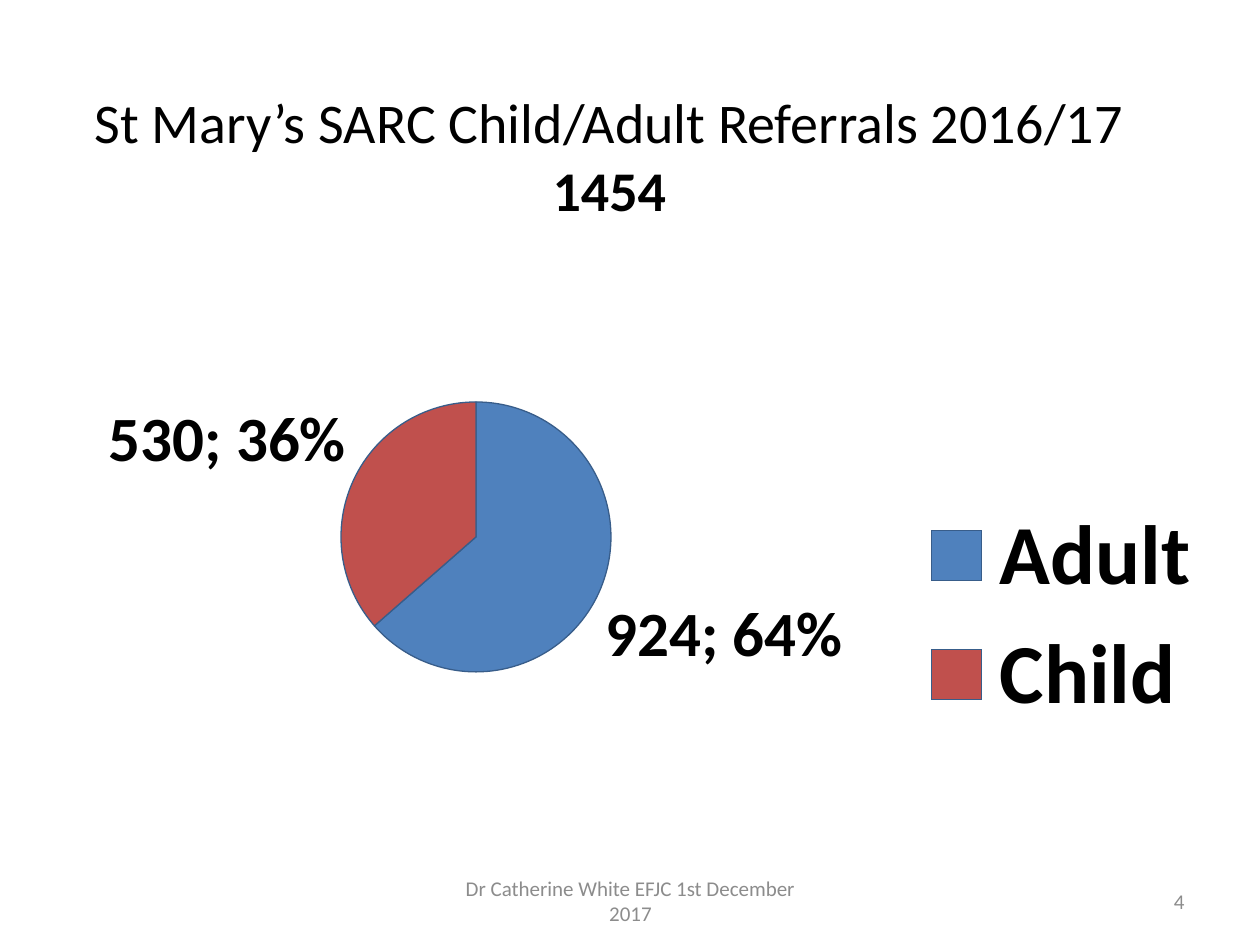
from dataclasses import dataclass

from lxml import etree
from pptx import Presentation
from pptx.chart.data import CategoryChartData
from pptx.dml.color import RGBColor
from pptx.enum.chart import XL_CHART_TYPE, XL_LABEL_POSITION, XL_LEGEND_POSITION
from pptx.enum.text import MSO_ANCHOR, PP_ALIGN
from pptx.oxml import parse_xml
from pptx.oxml.ns import nsdecls, qn
from pptx.util import Emu, Pt

PIE = XL_CHART_TYPE.PIE
OUTSIDE = XL_LABEL_POSITION.OUTSIDE_END
LEGEND_RIGHT = XL_LEGEND_POSITION.RIGHT
MIDDLE = MSO_ANCHOR.MIDDLE
CENTER, RIGHT = PP_ALIGN.CENTER, PP_ALIGN.RIGHT

PX_PER_INCH = 126
FONT = "Calibri"
COLORS = {"text": "000000", "footer": "8C8C8C", "Adult": "4F81BD",
          "Child": "C0504D", "outline": "385D8A"}
REFERRALS = {"Adult": 924, "Child": 530}


@dataclass(frozen=True)
class Box:
    left: int
    top: int
    width: int
    height: int


@dataclass(frozen=True)
class Line:
    text: str
    bold: bool = False


@dataclass(frozen=True)
class Caption:
    box: Box
    lines: tuple[Line, ...]
    size: int
    color: str
    align: PP_ALIGN


CHART_BOX = Box(32, 305, 1197, 620)
PIE_BOX = Box(341, 402, 270, 270)
CAPTIONS = (
    Caption(Box(54, 76, 1111, 158),
            (Line("St Mary’s SARC Child/Adult Referrals 2016/17"), Line("1454", True)),
            32, "text", CENTER),
    Caption(Box(431, 876, 399, 50),
            (Line("Dr Catherine White EFJC 1st December 2017"),), 12, "footer", CENTER),
    Caption(Box(903, 876, 294, 50), (Line("4"),), 12, "footer", RIGHT),
)


def px(length: int) -> Emu:
    return Emu(round(length * 914400 / PX_PER_INCH))


def place(box: Box) -> tuple[Emu, ...]:
    return px(box.left), px(box.top), px(box.width), px(box.height)


def rgb(name: str) -> RGBColor:
    return RGBColor.from_string(COLORS[name])


def style(font, size: int, color: str, bold: bool = False) -> None:
    font.name, font.size, font.bold = FONT, Pt(size), bold
    font.color.rgb = rgb(color)


def add_caption(slide, caption: Caption) -> None:
    frame = slide.shapes.add_textbox(*place(caption.box)).text_frame
    frame.word_wrap = True
    frame.vertical_anchor = MIDDLE
    paragraph = frame.paragraphs[0]
    paragraph.alignment = caption.align
    for index, line in enumerate(caption.lines):
        if index:
            paragraph.add_line_break()
        run = paragraph.add_run()
        run.text = line.text
        style(run.font, caption.size, caption.color, line.bold)


def fix_plot_area(chart, outer: Box, inner: Box) -> None:
    """Pin the pie to a fixed place inside the chart frame."""
    shares = {"x": (inner.left - outer.left) / outer.width,
              "y": (inner.top - outer.top) / outer.height,
              "w": inner.width / outer.width,
              "h": inner.height / outer.height}
    settings = {"layoutTarget": "inner", "xMode": "edge", "yMode": "edge",
                **{key: f"{share:.4f}" for key, share in shares.items()}}
    tags = "".join(f'<c:{tag} val="{val}"/>' for tag, val in settings.items())
    plot_area = chart.plots[0]._element.getparent()
    for layout in plot_area.findall(qn("c:layout")):
        plot_area.remove(layout)
    plot_area.insert(0, parse_xml(
        f'<c:layout {nsdecls("c")}><c:manualLayout>{tags}</c:manualLayout></c:layout>'))


def add_referral_pie(slide) -> None:
    data = CategoryChartData()
    data.categories = list(REFERRALS)
    data.add_series("Series 1", list(REFERRALS.values()))
    chart = slide.shapes.add_chart(PIE, *place(CHART_BOX), data).chart
    chart.has_title = False
    style(chart.font, 18, "text")
    fix_plot_area(chart, CHART_BOX, PIE_BOX)

    chart.has_legend = True
    chart.legend.position = LEGEND_RIGHT
    chart.legend.include_in_layout = False
    style(chart.legend.font, 48, "text", bold=True)

    plot = chart.plots[0]
    plot.vary_by_categories = True
    series = plot.series[0]
    for index, group in enumerate(REFERRALS):
        slice_format = series.points[index].format
        slice_format.fill.solid()
        slice_format.fill.fore_color.rgb = rgb(group)
        slice_format.line.color.rgb = rgb("outline")
        slice_format.line.width = Pt(0.75)

    labels = series.data_labels
    labels.show_value = labels.show_percentage = True
    labels.position = OUTSIDE
    style(labels.font, 36, "text", bold=True)
    separator = etree.Element(qn("c:separator"))
    separator.text = "; "
    labels._element.find(qn("c:showBubbleSize")).addnext(separator)


def main() -> None:
    deck = Presentation()
    deck.slide_width, deck.slide_height = px(1260), px(945)
    slide = deck.slides.add_slide(deck.slide_layouts[6])
    add_referral_pie(slide)
    for caption in CAPTIONS:
        add_caption(slide, caption)
    deck.save("out.pptx")


if __name__ == "__main__":
    main()
